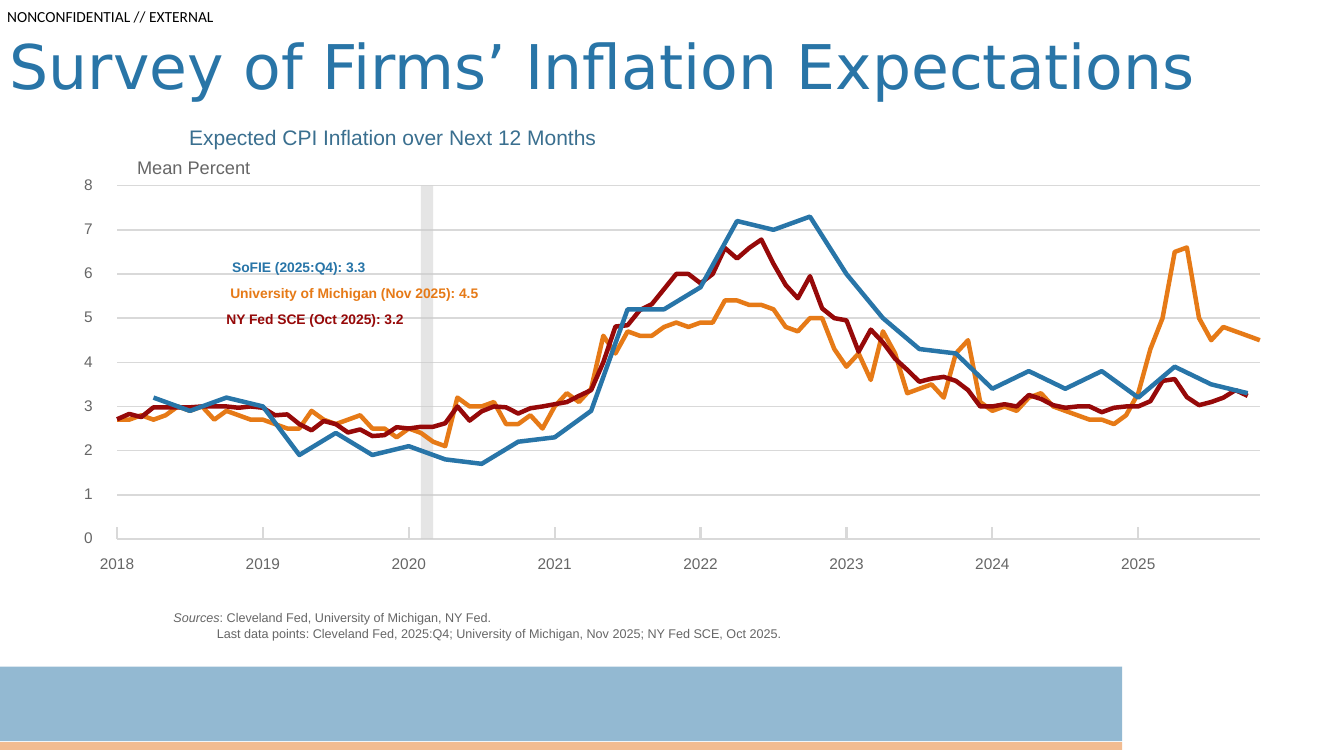
from lxml.etree import SubElement
from pptx import Presentation
from pptx.dml.color import RGBColor
from pptx.enum.shapes import MSO_CONNECTOR, MSO_SHAPE
from pptx.enum.text import MSO_ANCHOR, PP_ALIGN
from pptx.oxml.ns import qn
from pptx.util import Cm, Pt

BLUE, ORANGE, RED = "2875A8", "E67A17", "960909"
GREY, GRID = "666666", "D9D9D9"
PLOT_LEFT, PLOT_TOP, PLOT_WIDTH, PLOT_HEIGHT = 2.95, 4.68, 28.8, 8.9
FIRST_YEAR, LAST_YEAR, LAST_MONTH, TOP_PERCENT = 2018, 2025, 94, 8

MICHIGAN = [
    2.7, 2.7, 2.8, 2.7, 2.8, 3.0, 2.9, 3.0, 2.7, 2.9, 2.8, 2.7,
    2.7, 2.6, 2.5, 2.5, 2.9, 2.7, 2.6, 2.7, 2.8, 2.5, 2.5, 2.3,
    2.5, 2.4, 2.2, 2.1, 3.2, 3.0, 3.0, 3.1, 2.6, 2.6, 2.8, 2.5,
    3.0, 3.3, 3.1, 3.4, 4.6, 4.2, 4.7, 4.6, 4.6, 4.8, 4.9, 4.8,
    4.9, 4.9, 5.4, 5.4, 5.3, 5.3, 5.2, 4.8, 4.7, 5.0, 5.0, 4.3,
    3.9, 4.2, 3.6, 4.7, 4.2, 3.3, 3.4, 3.5, 3.2, 4.2, 4.5, 3.1,
    2.9, 3.0, 2.9, 3.2, 3.3, 3.0, 2.9, 2.8, 2.7, 2.7, 2.6, 2.8,
    3.3, 4.3, 5.0, 6.5, 6.6, 5.0, 4.5, 4.8, 4.7, 4.6, 4.5,
]
NY_FED = [
    2.71, 2.83, 2.76, 2.98, 2.98, 2.98, 2.98, 3.0, 3.0, 3.0, 2.97, 3.0,
    2.97, 2.8, 2.82, 2.6, 2.46, 2.67, 2.6, 2.41, 2.48, 2.33, 2.35, 2.53,
    2.5, 2.54, 2.54, 2.62, 3.0, 2.68, 2.89, 3.0, 2.98, 2.84, 2.96, 3.0,
    3.05, 3.1, 3.24, 3.37, 4.0, 4.81, 4.84, 5.18, 5.32, 5.66, 6.0, 6.0,
    5.79, 6.0, 6.59, 6.35, 6.59, 6.78, 6.23, 5.75, 5.45, 5.95, 5.22, 5.0,
    4.95, 4.24, 4.74, 4.45, 4.08, 3.83, 3.56, 3.63, 3.67, 3.58, 3.37, 3.0,
    3.0, 3.05, 3.0, 3.26, 3.17, 3.03, 2.97, 3.0, 3.0, 2.87, 2.97, 3.0,
    3.0, 3.12, 3.58, 3.62, 3.21, 3.03, 3.1, 3.2, 3.37, 3.24,
]
SOFIE = [
    3.2, 2.9, 3.2, 3.0, 1.9, 2.4, 1.9, 2.1, 1.8, 1.7, 2.2,
    2.3, 2.9, 5.2, 5.2, 5.7, 7.2, 7.0, 7.3, 6.0, 5.0, 4.3,
    4.2, 3.4, 3.8, 3.4, 3.8, 3.2, 3.9, 3.5, 3.3,
]
SURVEYS = [(MICHIGAN, 0, 1, ORANGE), (NY_FED, 0, 1, RED), (SOFIE, 3, 3, BLUE)]


def colour(hex_string):
    return RGBColor.from_string(hex_string)


def month_x(month):
    return PLOT_LEFT + PLOT_WIDTH * month / LAST_MONTH


def percent_y(percent):
    return PLOT_TOP + PLOT_HEIGHT * (1 - percent / TOP_PERCENT)


class SurveySlide:
    font = "Arial"

    def __init__(self, presentation):
        self.slide = presentation.slides.add_slide(presentation.slide_layouts[6])

    def bar(self, left, top, width, height, fill):
        bar = self.slide.shapes.add_shape(
            MSO_SHAPE.RECTANGLE, Cm(left), Cm(top), Cm(width), Cm(height))
        bar.shadow.inherit = False
        bar.line.fill.background()
        bar.fill.solid()
        bar.fill.fore_color.rgb = colour(fill)
        tint = bar.fill._xPr.find(".//" + qn("a:srgbClr"))
        SubElement(tint, qn("a:alpha"), val="50000")

    def rule(self, left, top, right, bottom, weight):
        rule = self.slide.shapes.add_connector(
            MSO_CONNECTOR.STRAIGHT, Cm(left), Cm(top), Cm(right), Cm(bottom))
        rule.line.color.rgb = colour(GRID)
        rule.line.width = Pt(weight)
        SubElement(rule._element.spPr, qn("a:effectLst"))

    def curve(self, values, first_month, step, ink):
        points = [(Cm(month_x(first_month + step * position)), Cm(percent_y(value)))
                  for position, value in enumerate(values)]
        builder = self.slide.shapes.build_freeform(*points[0])
        builder.add_line_segments(points[1:], close=False)
        curve = builder.convert_to_shape()
        curve.shadow.inherit = False
        curve.fill.background()
        curve.line.color.rgb = colour(ink)
        curve.line.width = Pt(3.2)

    def text(self, left, top, width, height, runs, size, ink, font=None,
             bold=False, align=PP_ALIGN.CENTER, spacing=None, inset=0):
        box = self.slide.shapes.add_textbox(Cm(left), Cm(top), Cm(width), Cm(height))
        frame = box.text_frame
        frame.word_wrap = True
        frame.vertical_anchor = MSO_ANCHOR.MIDDLE
        frame.margin_left = frame.margin_right = Cm(inset)
        frame.margin_top = frame.margin_bottom = 0
        line = frame.paragraphs[0]
        line.alignment = align
        line.line_spacing = spacing or Pt(size)
        for words, italic in runs:
            run = line.add_run()
            run.text = words
            run.font.name = font or self.font
            run.font.size = Pt(size)
            run.font.bold = bold
            run.font.italic = italic
            run.font.color.rgb = colour(ink)


def main():
    presentation = Presentation()
    presentation.slide_width, presentation.slide_height = Cm(33.87), Cm(19.05)
    survey = SurveySlide(presentation)

    survey.bar(0, 16.8, 28.28, 1.88, "2975A7")
    survey.bar(0, 18.7, 28.28, 0.2, "E67B25")
    survey.text(0.18, 0.18, 5.6, 0.46, [("NONCONFIDENTIAL // EXTERNAL", False)], 11,
                "000000", font="Calibri", align=PP_ALIGN.LEFT, spacing=1.0)
    survey.text(0, 0.38, 33.87, 2.74, [("Survey of Firms’ Inflation Expectations", False)],
                44, "2975A7", font="DejaVu Sans", align=PP_ALIGN.LEFT, spacing=0.9,
                inset=0.25)

    for percent in range(TOP_PERCENT + 1):
        y = percent_y(percent)
        survey.rule(PLOT_LEFT, y, PLOT_LEFT + PLOT_WIDTH, y, 1.07)
        survey.text(2.08, y - 0.16, 0.3, 0.33, [(str(percent), False)], 11, GREY)
    for year in range(FIRST_YEAR, LAST_YEAR + 1):
        x = month_x(12 * (year - FIRST_YEAR))
        survey.rule(x, percent_y(0) - 0.3, x, percent_y(0), 1.6)
        survey.text(x - 0.59, 14.07, 1.18, 0.33, [(str(year), False)], 11, GREY)

    recession_start, recession_end = month_x(25), month_x(26)
    survey.bar(recession_start, PLOT_TOP, recession_end - recession_start, PLOT_HEIGHT,
               "CCCCCC")
    for values, first_month, step, ink in SURVEYS:
        survey.curve(values, first_month, step, ink)

    survey.text(2.95, 3.28, 13.9, 0.46,
                [("Expected CPI Inflation over Next 12 Months", False)], 15, "3A6F8F")
    survey.text(2.95, 4.06, 3.86, 0.38, [("Mean Percent", False)], 13, GREY)

    latest = [
        ("SoFIE (2025:Q4): 3.3", 5.23, 4.6, BLUE),
        ("University of Michigan (Nov 2025): 4.5", 4.65, 8.56, ORANGE),
        ("NY Fed SCE (Oct 2025): 3.2", 4.88, 6.12, RED),
    ]
    for row, (label, left, width, ink) in enumerate(latest):
        survey.text(left, 6.6 + 0.66 * row, width, 0.3, [(label, False)], 9.9, ink,
                    bold=True)

    survey.text(2.95, 15.44, 10.85, 0.28,
                [("Sources", True), (": Cleveland Fed, University of Michigan, NY Fed.", False)],
                9, GREY)
    survey.text(2.95, 15.85, 19.25, 0.28,
                [("Last data points: Cleveland Fed, 2025:Q4; University of Michigan, "
                  "Nov 2025; NY Fed SCE, Oct 2025.", False)], 9, GREY)

    presentation.save("out.pptx")


if __name__ == "__main__":
    main()
